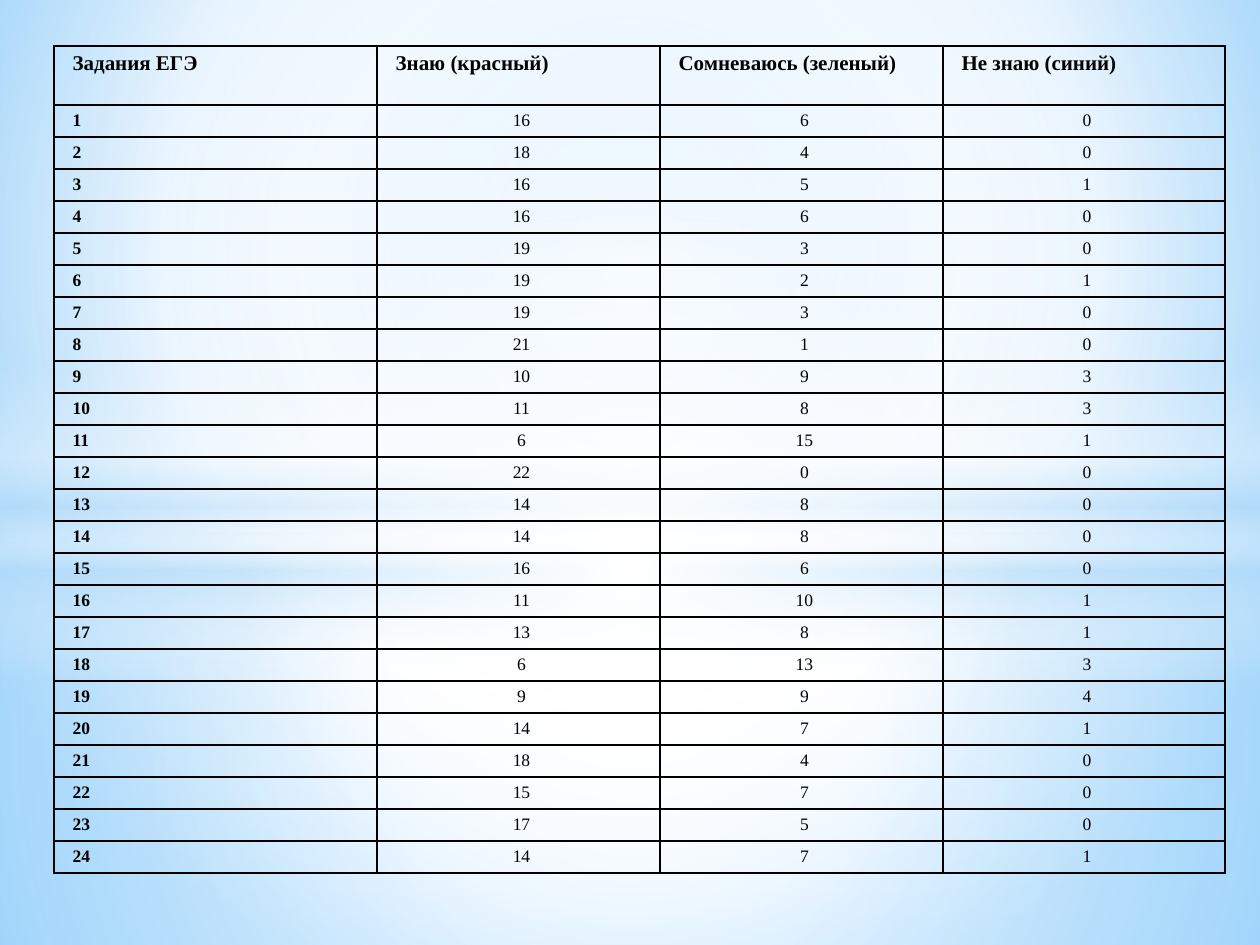
from lxml.etree import SubElement
from pptx import Presentation
from pptx.dml.color import RGBColor
from pptx.enum.shapes import MSO_SHAPE as Shape
from pptx.enum.text import MSO_ANCHOR as Anchor, PP_ALIGN as Align
from pptx.oxml.ns import qn
from pptx.util import Emu, Pt

COLORS = {"black": "000000", "white": "FFFFFF", "pale": "B4DCFA",
          "sky": "9ED5FF", "blue": "5BB9FF"}
FONT = "Times New Roman"
EMU_PER_PX = 914400 / 126
CENTER = (50, 50, 50, 50)
COLUMNS = (323, 283, 283, 282)
HEADER_HEIGHT, ROW_HEIGHT = 59, 32
HEADERS = ("Задания ЕГЭ", "Знаю (красный)", "Сомневаюсь (зеленый)", "Не знаю (синий)")
ANSWERS = (
    (16, 6, 0), (18, 4, 0), (16, 5, 1), (16, 6, 0), (19, 3, 0), (19, 2, 1),
    (19, 3, 0), (21, 1, 0), (10, 9, 3), (11, 8, 3), (6, 15, 1), (22, 0, 0),
    (14, 8, 0), (14, 8, 0), (16, 6, 0), (11, 10, 1), (13, 8, 1), (6, 13, 3),
    (9, 9, 4), (14, 7, 1), (18, 4, 0), (15, 7, 0), (17, 5, 0), (14, 7, 1),
)
GLOWS = (
    (Shape.RECTANGLE, (0, 533, 1260, 412),
     ((0, "white", 91), (37, "white", 76), (100, "pale", 79)), CENTER),
    (Shape.RECTANGLE, (0, 0, 1260, 533),
     ((0, "white", 89), (48, "white", 62), (100, "pale", 79)), CENTER),
    (Shape.RECTANGLE, (0, 365, 1260, 315),
     ((0, "white", 0), (29, "white", 30), (45, "pale", 40), (55, "white", 26),
      (65, "pale", 60), (100, "white", 0)), None),
    (Shape.OVAL, (0, 220, 1260, 703), ((0, "white", 100), (54, "white", 0)), CENTER),
)


def px(length):
    """Turn pixels into EMU."""
    return Emu(round(length * EMU_PER_PX))


def set_gradient(fill, element, stops, focus):
    """Fill with (position, color, opacity) stops, circular if a focus is given."""
    fill.gradient()
    gradient = next(element.iter(qn("a:gradFill")))
    for child in list(gradient):
        gradient.remove(child)
    stop_list = SubElement(gradient, qn("a:gsLst"))
    for position, color, opacity in stops:
        stop = SubElement(stop_list, qn("a:gs"), pos=str(position * 1000))
        tint = SubElement(stop, qn("a:srgbClr"), val=COLORS[color])
        SubElement(tint, qn("a:alpha"), val=str(opacity * 1000))
    if focus is None:
        SubElement(gradient, qn("a:lin"), ang="5400000", scaled="0")
        return
    circle = SubElement(gradient, qn("a:path"), path="circle")
    sides = {side: str(share * 1000) for side, share in zip("ltrb", focus)}
    SubElement(circle, qn("a:fillToRect"), **sides)


def add_glow(slide, kind, box, stops, focus):
    """Add a borderless translucent gradient shape."""
    shape = slide.shapes.add_shape(kind, *map(px, box))
    shape.shadow.inherit = False
    shape.line.fill.background()
    set_gradient(shape.fill, shape.element.spPr, stops, focus)


def write_text(frame, text, size=10, bold=False, align=Align.LEFT, color="black"):
    """Write one paragraph with a hanging indent."""
    paragraph = frame.paragraphs[0]
    paragraph.text = text
    paragraph.alignment = align
    properties = paragraph._p.get_or_add_pPr()
    properties.set("marL", str(px(31)))
    properties.set("indent", str(px(-25)))
    font = paragraph.font if not paragraph.runs else paragraph.runs[0].font
    font.name, font.size, font.bold = FONT, Pt(size), bold
    font.color.rgb = RGBColor.from_string(COLORS[color])


def format_cell(cell):
    """Give a cell thin black borders, no fill and tight vertical margins."""
    properties = cell._tc.get_or_add_tcPr()
    for side in ("lnL", "lnR", "lnT", "lnB"):
        border = SubElement(properties, qn(f"a:{side}"), w=str(Pt(1)))
        solid = SubElement(border, qn("a:solidFill"))
        SubElement(solid, qn("a:srgbClr"), val=COLORS["black"])
    cell.fill.background()
    cell.margin_top, cell.margin_bottom = px(6), px(5)
    cell.vertical_anchor = Anchor.TOP


def add_answer_table(slide):
    """Add the table of answers for each exam task."""
    rows = [HEADERS] + [(task, *counts) for task, counts in enumerate(ANSWERS, 1)]
    height = HEADER_HEIGHT + ROW_HEIGHT * len(ANSWERS)
    table = slide.shapes.add_table(len(rows), len(COLUMNS), px(54), px(46),
                                   px(sum(COLUMNS)), px(height)).table
    table.first_row = table.horz_banding = False
    for column, width in zip(table.columns, COLUMNS):
        column.width = px(width)
    for row_index, values in enumerate(rows):
        header = row_index == 0
        table.rows[row_index].height = px(HEADER_HEIGHT if header else ROW_HEIGHT)
        for column_index, value in enumerate(values):
            label = header or column_index == 0
            cell = table.cell(row_index, column_index)
            format_cell(cell)
            write_text(cell.text_frame, str(value), size=12 if header else 10,
                       bold=label, align=Align.LEFT if label else Align.CENTER)


def main():
    """Build and save the slide."""
    presentation = Presentation()
    presentation.slide_width, presentation.slide_height = px(1260), px(945)
    slide = presentation.slides.add_slide(presentation.slide_layouts[6])
    set_gradient(slide.background.fill, slide.element,
                 ((0, "sky", 100), (60, "white", 100), (100, "blue", 100)),
                 (20, 10, 20, 60))
    for glow in GLOWS:
        add_glow(slide, *glow)
    add_answer_table(slide)
    presentation.save("out.pptx")


if __name__ == "__main__":
    main()
